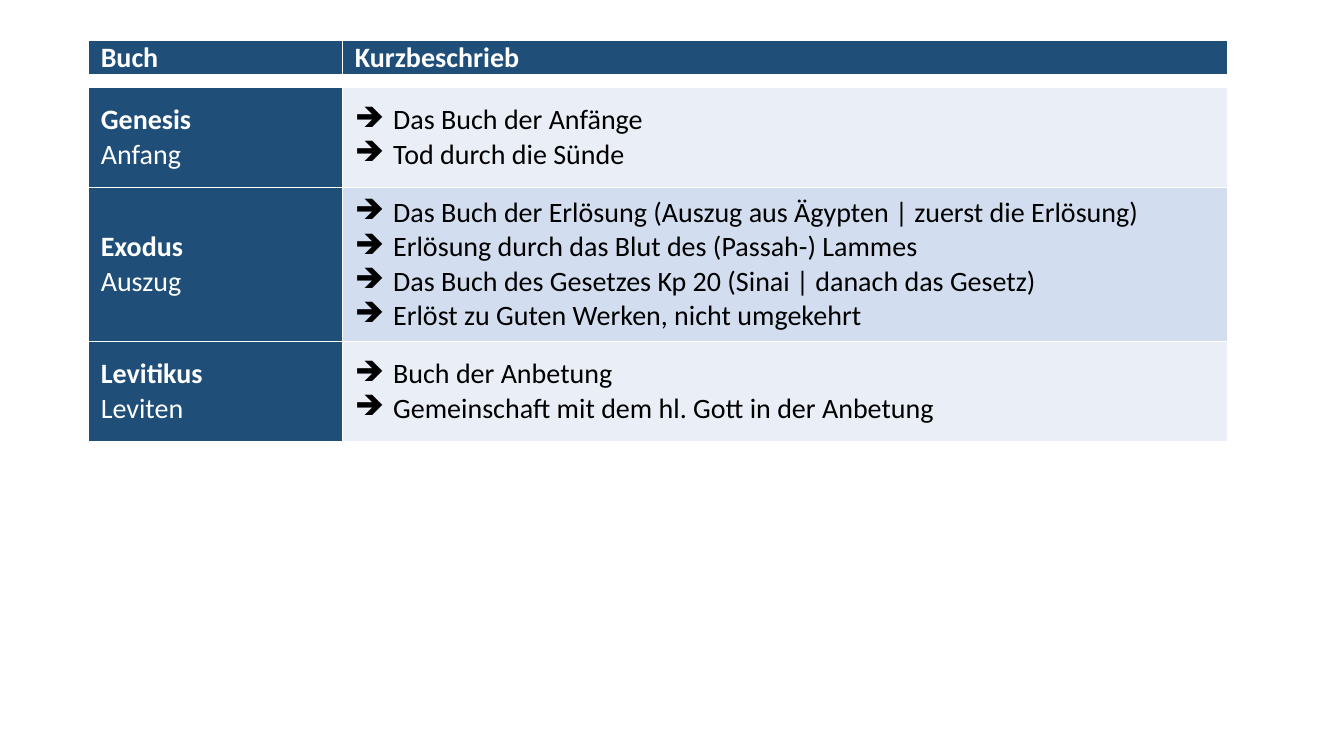
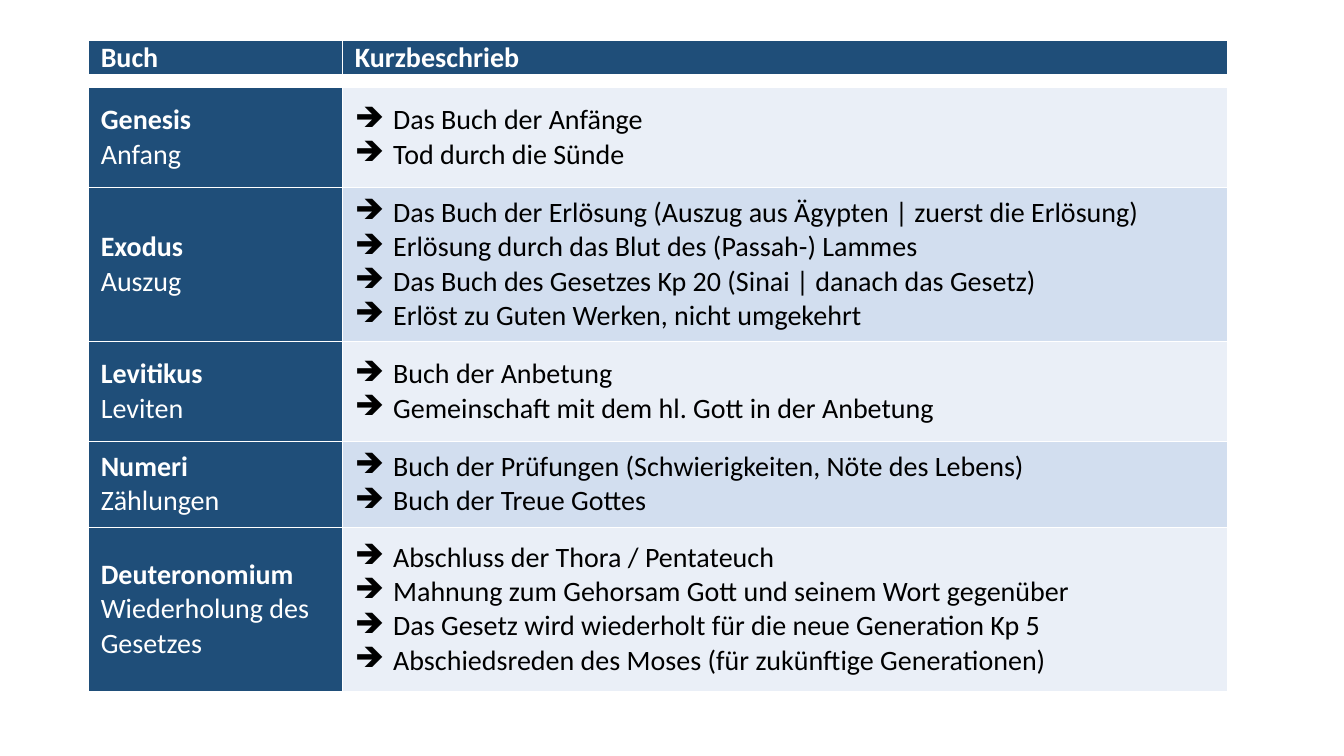
import pptx
import pptx.dml.color
import pptx.enum.text
import pptx.oxml.ns
import pptx.util
from dataclasses import dataclass
from lxml import etree

BOOKS = [
    ("Genesis", "Anfang", 99, [
        "Das Buch der Anfänge",
        "Tod durch die Sünde"]),
    ("Exodus", "Auszug", 153, [
        "Das Buch der Erlösung (Auszug aus Ägypten | zuerst die Erlösung)",
        "Erlösung durch das Blut des (Passah-) Lammes",
        "Das Buch des Gesetzes Kp 20 (Sinai | danach das Gesetz)",
        "Erlöst zu Guten Werken, nicht umgekehrt"]),
    ("Levitikus", "Leviten", 99, [
        "Buch der Anbetung",
        "Gemeinschaft mit dem hl. Gott in der Anbetung"]),
    ("Numeri", "Zählungen", 85, [
        "Buch der Prüfungen (Schwierigkeiten, Nöte des Lebens)",
        "Buch der Treue Gottes"]),
    ("Deuteronomium", "Wiederholung des Gesetzes", 163, [
        "Abschluss der Thora / Pentateuch",
        "Mahnung zum Gehorsam Gott und seinem Wort gegenüber",
        "Das Gesetz wird wiederholt für die neue Generation Kp 5",
        "Abschiedsreden des Moses (für zukünftige Generationen)"]),
]
HEADINGS = ("Buch", "Kurzbeschrieb")
BOOKS_PER_SLIDE = (3, 5)

PX = 9144
SLIDE_SIZE = (1333, 750)
TABLE_LEFT, TABLE_TOP = 88, 40
COLUMN_WIDTHS = (252, 878)
HEADING_HEIGHT, GAP_HEIGHT = 35, 12
CELL_INSET, BULLET_INDENT = 12, 38


@dataclass(frozen=True)
class Theme:
    font: str = "Calibri"
    size: int = 20
    gap_size: int = 6
    dark: str = "1F4E79"
    bands: tuple = ("EAEFF7", "D2DEEF")
    white: str = "FFFFFF"
    black: str = "000000"
    rule: int = 1
    heading_rule: int = 3
    bullet: str = "➔"


THEME = Theme()


def rgb(value):
    return pptx.dml.color.RGBColor.from_string(value)


def add_xml(parent, tag, **attributes):
    return etree.SubElement(parent, pptx.oxml.ns.qn(tag),
                            {key: str(value) for key, value in attributes.items()})


def paint(cell, colour, top=THEME.rule, bottom=THEME.rule):
    cell.fill.solid()
    cell.fill.fore_color.rgb = rgb(colour)
    properties = cell._tc.get_or_add_tcPr()
    edges = (("L", THEME.rule), ("R", THEME.rule), ("T", top), ("B", bottom))
    for position, (side, width) in enumerate(edges):
        border = add_xml(properties, f"a:ln{side}", w=pptx.util.Pt(width))
        add_xml(add_xml(border, "a:solidFill"), "a:srgbClr", val=THEME.white)
        properties.insert(position, border)


def write(cell, lines, colour=THEME.white, bold_lines=0, bulleted=False,
          align=None, anchor=pptx.enum.text.MSO_ANCHOR.MIDDLE):
    cell.margin_left = cell.margin_right = CELL_INSET * PX
    cell.margin_top = cell.margin_bottom = 0
    cell.vertical_anchor = anchor
    frame = cell.text_frame
    for number, line in enumerate(lines):
        paragraph = frame.add_paragraph() if number else frame.paragraphs[0]
        paragraph.alignment = align
        run = paragraph.add_run()
        run.text = line
        run.font.name = THEME.font
        run.font.size = pptx.util.Pt(THEME.size)
        run.font.bold = number < bold_lines
        run.font.color.rgb = rgb(colour)
        if bulleted:
            properties = paragraph._p.get_or_add_pPr()
            properties.set("marL", str(BULLET_INDENT * PX))
            properties.set("indent", str(-BULLET_INDENT * PX))
            add_xml(properties, "a:buChar", char=THEME.bullet)


def leave_gap(cell):
    paint(cell, THEME.white, top=THEME.heading_rule)
    cell.margin_top = cell.margin_bottom = 0
    add_xml(cell.text_frame.paragraphs[0]._p, "a:endParaRPr", sz=THEME.gap_size * 100)


def add_overview(slide, books):
    heights = [HEADING_HEIGHT, GAP_HEIGHT] + [height for _, _, height, _ in books]
    bounds = (TABLE_LEFT, TABLE_TOP, sum(COLUMN_WIDTHS), sum(heights))
    overview = slide.shapes.add_table(len(heights), len(COLUMN_WIDTHS),
                                      *(length * PX for length in bounds)).table
    for column, width in zip(overview.columns, COLUMN_WIDTHS):
        column.width = width * PX
    for row, height in zip(overview.rows, heights):
        row.height = height * PX

    for column, heading in enumerate(HEADINGS):
        heading_cell = overview.cell(0, column)
        paint(heading_cell, THEME.dark, bottom=THEME.heading_rule)
        write(heading_cell, [heading], bold_lines=1,
              align=pptx.enum.text.PP_ALIGN.JUSTIFY,
              anchor=pptx.enum.text.MSO_ANCHOR.TOP)
        leave_gap(overview.cell(1, column))

    for number, (name, meaning, _, summary) in enumerate(books):
        name_cell, summary_cell = overview.rows[number + 2].cells
        paint(name_cell, THEME.dark)
        write(name_cell, [name, meaning], bold_lines=1)
        paint(summary_cell, THEME.bands[number % len(THEME.bands)])
        write(summary_cell, summary, colour=THEME.black, bulleted=True)


def main():
    deck = pptx.Presentation()
    deck.slide_width, deck.slide_height = (length * PX for length in SLIDE_SIZE)
    blank = deck.slide_layouts[6]
    for count in BOOKS_PER_SLIDE:
        add_overview(deck.slides.add_slide(blank), BOOKS[:count])
    deck.save("out.pptx")


if __name__ == "__main__":
    main()
